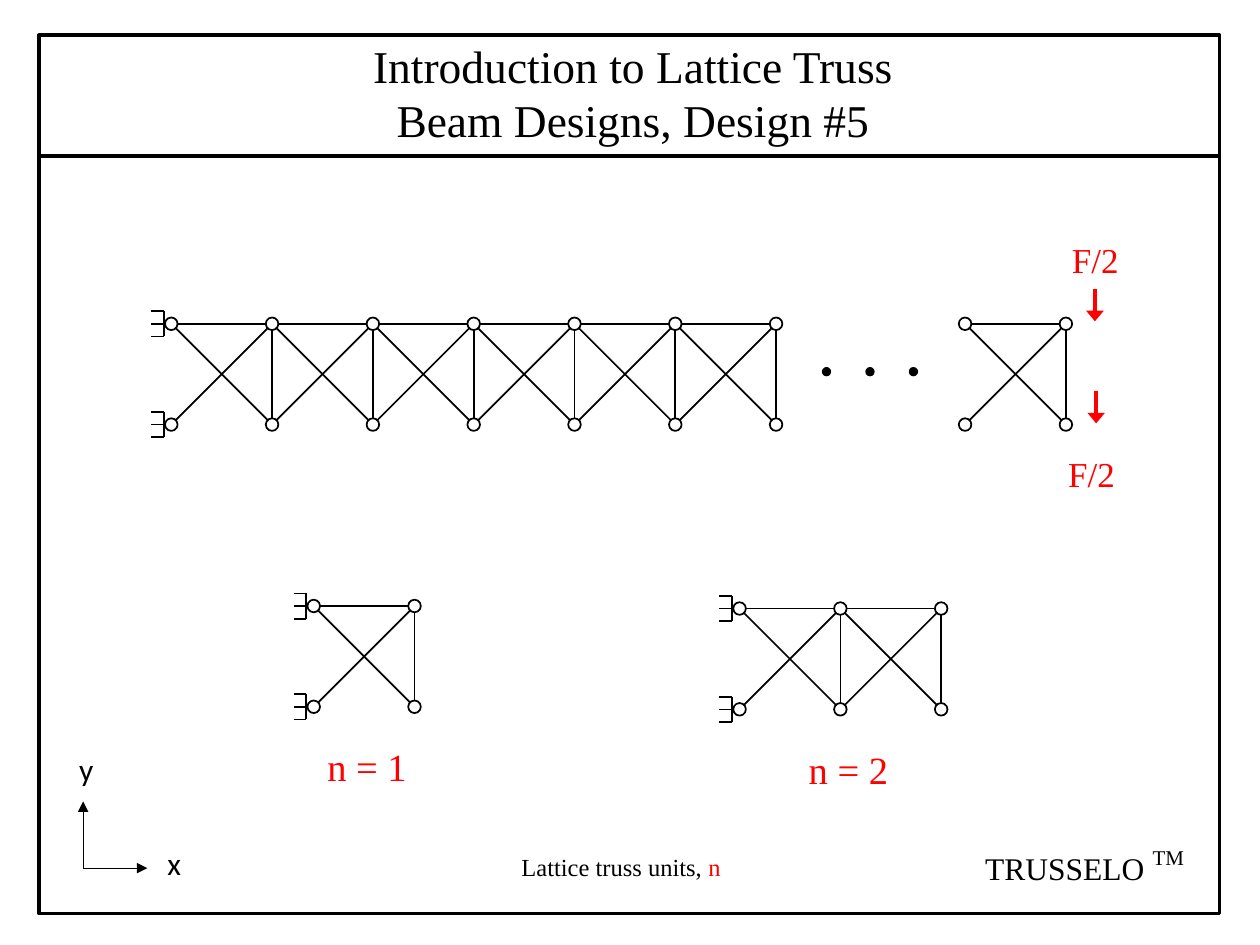
from lxml.etree import SubElement
from pptx import Presentation
from pptx.dml.color import RGBColor
from pptx.enum.shapes import MSO_CONNECTOR, MSO_SHAPE
from pptx.enum.text import PP_ALIGN
from pptx.oxml.ns import qn
from pptx.util import Inches, Pt

COLORS = {"ink": "000000", "force": "FF0000", "joint": "FFFFFF"}
SERIF = "Times New Roman"
SANS = "Calibri"
BAY = 0.8


def color(name):
    """Return the named colour."""
    return RGBColor.from_string(COLORS[name])


def add_line(slide, start, end, ink="ink", weight=1, head=None):
    """Draw a straight line between two points, with an arrowhead of a given width."""
    line = slide.shapes.add_connector(
        MSO_CONNECTOR.STRAIGHT, *(Inches(value) for value in (*start, *end)))
    line.line.color.rgb = color(ink)
    line.line.width = Pt(weight)
    properties = line._element.spPr
    if head:
        SubElement(properties.find(qn("a:ln")), qn("a:tailEnd"), type="triangle", w=head)
    SubElement(properties, qn("a:effectLst"))


def add_circle(slide, x, y, diameter, fill):
    """Draw an outlined circle centred on a point."""
    circle = slide.shapes.add_shape(
        MSO_SHAPE.OVAL, Inches(x - diameter / 2), Inches(y - diameter / 2),
        Inches(diameter), Inches(diameter))
    circle.shadow.inherit = False
    circle.fill.solid()
    circle.fill.fore_color.rgb = color(fill)
    circle.line.color.rgb = color("ink")
    circle.line.width = Pt(1)


def add_text(slide, box, paragraphs, size, font=SERIF, align=PP_ALIGN.LEFT):
    """Write paragraphs of (text, colour) runs in a box."""
    frame = slide.shapes.add_textbox(*(Inches(value) for value in box)).text_frame
    frame.word_wrap = True
    for index, runs in enumerate(paragraphs):
        paragraph = frame.add_paragraph() if index else frame.paragraphs[0]
        paragraph.alignment = align
        for text, ink in runs:
            run = paragraph.add_run()
            run.text = text
            run.font.name = font
            run.font.size = Pt(size)
            run.font.color.rgb = color(ink)


def add_frame(slide, left, top, width, height):
    """Draw the border, the title and the rule under it."""
    border = slide.shapes.add_shape(
        MSO_SHAPE.RECTANGLE, Inches(left), Inches(top), Inches(width), Inches(height))
    border.shadow.inherit = False
    border.fill.background()
    border.line.color.rgb = color("ink")
    border.line.width = Pt(2)
    rule = top + 0.96
    add_line(slide, (left, rule), (left + width, rule), weight=2)
    title = [[("Introduction to Lattice Truss", "ink")],
             [("Beam Designs, Design #5", "ink")]]
    add_text(slide, (left + 2.46, top - 0.03, 4.51, 0.98), title, 26,
             align=PP_ALIGN.CENTER)


def add_support(slide, x, y):
    """Draw a fixed support to the left of a joint."""
    wall = x - 0.06
    add_line(slide, (wall, y - 0.1), (wall, y + 0.1))
    for tick in (y - 0.1, y, y + 0.1):
        add_line(slide, (wall - 0.1, tick), (wall, tick))


def add_truss(slide, left, top, bays, supported=True):
    """Draw a row of cross-braced bays starting at the upper left joint."""
    bottom = top + BAY
    columns = [left + BAY * index for index in range(bays + 1)]
    for near, far in zip(columns, columns[1:]):
        add_line(slide, (near, top), (far, top))
        add_line(slide, (near, top), (far, bottom))
        add_line(slide, (near, bottom), (far, top))
        add_line(slide, (far, top), (far, bottom))
    for y in (top, bottom):
        if supported:
            add_support(slide, left, y)
        for x in columns:
            add_circle(slide, x, y, 0.1, "joint")


def add_loaded_beam(slide, left, top):
    """Draw the long beam, its continuation dots and the loaded end bay."""
    add_truss(slide, left, top, 6)
    for index in range(3):
        add_circle(slide, left + 5.2 + 0.345 * index, top + 0.38, 0.06, "ink")
    add_truss(slide, left + 6.3, top, 1, supported=False)
    force = [[("F/2", "force")]]
    for x, tip, label_left, label_top in (
            (left + 7.33, top - 0.02, left + 7.05, top - 0.73),
            (left + 7.34, top + 0.79, left + 7.02, top + 0.97)):
        add_line(slide, (x, tip - 0.26), (x, tip), "force", 2, head="lg")
        add_text(slide, (label_left, label_top, 0.7, 0.44), force, 20)


def add_example(slide, left, top, bays, label_left):
    """Draw a short supported truss with its unit count below."""
    add_truss(slide, left, top, bays)
    add_text(slide, (label_left, top + 1.04, 1.03, 0.47),
             [[(f"n = {bays}", "force")]], 22)


def add_axes(slide, x, y):
    """Draw the x and y axes from their origin."""
    add_line(slide, (x, y), (x + 0.51, y), weight=0.5, head="med")
    add_line(slide, (x, y), (x, y - 0.53), weight=0.5, head="med")
    add_text(slide, (x + 0.57, y - 0.24, 0.31, 0.4), [[("x", "ink")]], 18, SANS)
    add_text(slide, (x - 0.13, y - 0.99, 0.31, 0.4), [[("y", "ink")]], 18, SANS)


def add_footer(slide, left, top):
    """Write the caption and the trade name."""
    add_text(slide, (left, top, 1.85, 0.34),
             [[("Lattice truss units, ", "ink"), ("n", "force")]], 14)
    add_text(slide, (left + 3.68, top - 0.02, 1.52, 0.4), [[("TRUSSELO", "ink")]], 18)
    add_text(slide, (left + 5.01, top - 0.06, 0.51, 0.3), [[("TM", "ink")]], 12)


def main():
    """Build and save the slide."""
    deck = Presentation()
    deck.slide_width, deck.slide_height = Inches(10), Inches(7.5)
    slide = deck.slides.add_slide(deck.slide_layouts[6])
    add_frame(slide, 0.31, 0.28, 9.37, 6.97)
    add_loaded_beam(slide, 1.36, 2.57)
    add_example(slide, 2.49, 4.81, 1, 2.5)
    add_example(slide, 5.87, 4.83, 2, 6.32)
    add_axes(slide, 0.66, 6.89)
    add_footer(slide, 4.04, 6.71)
    deck.save("out.pptx")


if __name__ == "__main__":
    main()
